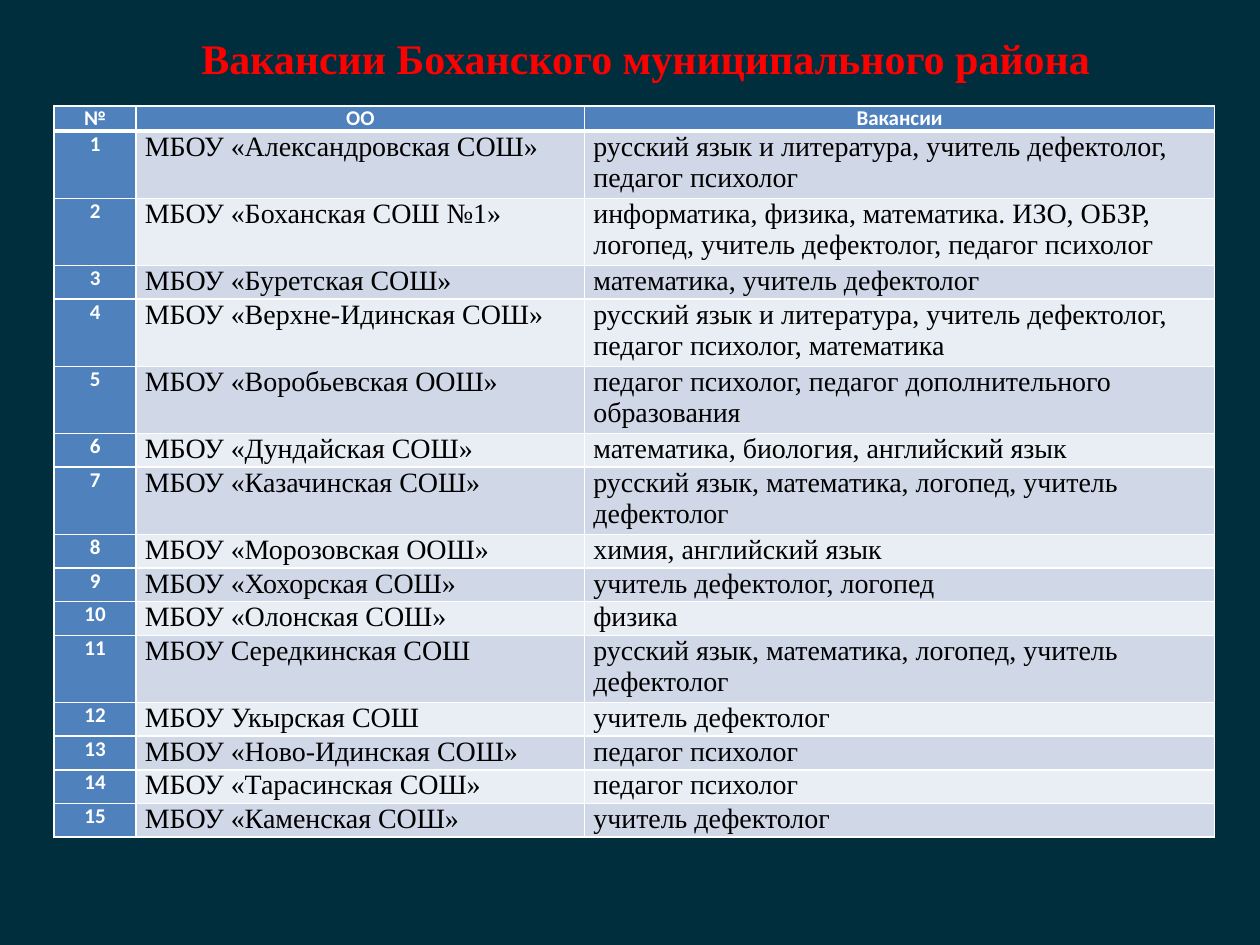
from dataclasses import dataclass

from lxml import etree
from pptx import Presentation
from pptx import util as u
from pptx.dml import color
from pptx.enum import text
from pptx.oxml import ns


@dataclass(frozen=True)
class Theme:
    """Colours, fonts and type sizes of the deck."""
    background: str = "002E3D"
    title: str = "FF0000"
    accent: str = "4F81BD"
    light: str = "FFFFFF"
    dark: str = "000000"
    bands: tuple = ("D0D8E8", "E9EDF4")
    serif: str = "Times New Roman"
    sans: str = "Calibri"
    title_size: int = 24
    body_size: int = 16
    label_size: int = 12


THEME = Theme()
HEADINGS = ("№", "ОО", "Вакансии")
VACANCIES = (
    ("МБОУ «Александровская СОШ»", "русский язык и литература, учитель дефектолог, педагог психолог"),
    ("МБОУ «Боханская СОШ №1»",
     "информатика, физика, математика. ИЗО, ОБЗР, логопед, учитель дефектолог, педагог психолог"),
    ("МБОУ «Буретская СОШ»", "математика, учитель дефектолог"),
    ("МБОУ «Верхне-Идинская СОШ»",
     "русский язык и литература, учитель дефектолог, педагог психолог, математика"),
    ("МБОУ «Воробьевская ООШ»", "педагог психолог, педагог дополнительного образования"),
    ("МБОУ «Дундайская СОШ»", "математика, биология, английский язык"),
    ("МБОУ «Казачинская СОШ»", "русский язык, математика, логопед, учитель дефектолог"),
    ("МБОУ «Морозовская ООШ»", "химия, английский язык"),
    ("МБОУ «Хохорская СОШ»", "учитель дефектолог, логопед"),
    ("МБОУ «Олонская СОШ»", "физика"),
    ("МБОУ Середкинская СОШ", "русский язык, математика, логопед, учитель дефектолог"),
    ("МБОУ Укырская СОШ", "учитель дефектолог"),
    ("МБОУ «Ново-Идинская СОШ»", "педагог психолог"),
    ("МБОУ «Тарасинская СОШ»", "педагог психолог"),
    ("МБОУ «Каменская СОШ»", "учитель дефектолог"),
)
COLUMN_SHARES = (0.65, 3.56, 5)
HEADER_HEIGHT = u.Inches(0.2)
LINE_LIMIT = 40


def style_text(para, font_name, size, rgb, bold=False, centred=False):
    """Format the runs and alignment of one paragraph."""
    para.alignment = text.PP_ALIGN.CENTER if centred else text.PP_ALIGN.LEFT
    for span in para.runs:
        span.font.name = font_name
        span.font.size = u.Pt(size)
        span.font.bold = bold
        span.font.color.rgb = color.RGBColor.from_string(rgb)


def set_borders(cell, bottom=1, top=1):
    """Draw light borders around a cell, with widths in points."""
    properties = cell._tc.get_or_add_tcPr()
    widths = {"lnL": 1, "lnR": 1, "lnT": top, "lnB": bottom}
    for position, (side, width) in enumerate(widths.items()):
        line = etree.Element(ns.qn(f"a:{side}"), w=str(u.Pt(width)))
        fill = etree.SubElement(line, ns.qn("a:solidFill"))
        etree.SubElement(fill, ns.qn("a:srgbClr"), val=THEME.light)
        properties.insert(position, line)


def fill_cell(cell, words, fill, is_label):
    """Set the wording, fill, insets and type of one cell."""
    cell.text = words
    cell.fill.solid()
    cell.fill.fore_color.rgb = color.RGBColor.from_string(fill)
    cell.margin_left = cell.margin_right = u.Inches(0.07)
    cell.margin_top = cell.margin_bottom = 0
    para = cell.text_frame.paragraphs[0]
    if is_label:
        style_text(para, THEME.sans, THEME.label_size, THEME.light, bold=True, centred=True)
    else:
        style_text(para, THEME.serif, THEME.body_size, THEME.dark)


def add_title(page, left, top, width, height):
    """Place the centred heading in the given box."""
    box = page.shapes.add_textbox(left, top, width, height)
    frame = box.text_frame
    frame.word_wrap = True
    frame.text = "Вакансии Боханского муниципального района"
    style_text(frame.paragraphs[0], THEME.serif, THEME.title_size, THEME.title, bold=True, centred=True)


def add_vacancies(page, left, top, width, height):
    """Place the numbered vacancy table in the given box."""
    rows = [HEADINGS] + [(str(number), *entry) for number, entry in enumerate(VACANCIES, 1)]
    table = page.shapes.add_table(len(rows), len(HEADINGS), left, top, width, height).table
    for column, share in zip(table.columns, COLUMN_SHARES):
        column.width = int(width * share / sum(COLUMN_SHARES))
    lines = [2 if len(subjects) > LINE_LIMIT else 1 for _, subjects in VACANCIES]
    line_height = (height - HEADER_HEIGHT) / sum(lines)
    for row_index, values in enumerate(rows):
        is_header = row_index == 0
        table.rows[row_index].height = HEADER_HEIGHT if is_header else int(line_height * lines[row_index - 1])
        for column_index, words in enumerate(values):
            is_label = is_header or column_index == 0
            fill = THEME.accent if is_label else THEME.bands[(row_index - 1) % 2]
            cell = table.cell(row_index, column_index)
            fill_cell(cell, words, fill, is_label)
            set_borders(cell, bottom=3 if is_header else 1, top=3 if row_index == 1 else 1)


def main():
    """Build and save the deck."""
    deck = Presentation()
    deck.slide_width, deck.slide_height = u.Inches(10), u.Inches(7.5)
    page = deck.slides.add_slide(deck.slide_layouts[6])
    page.background.fill.solid()
    page.background.fill.fore_color.rgb = color.RGBColor.from_string(THEME.background)
    add_title(page, u.Inches(0.91), u.Inches(0.21), u.Inches(8.43), u.Inches(0.5))
    add_vacancies(page, u.Inches(0.43), u.Inches(0.84), u.Inches(9.21), u.Inches(5.8))
    deck.save("out.pptx")


if __name__ == "__main__":
    main()
